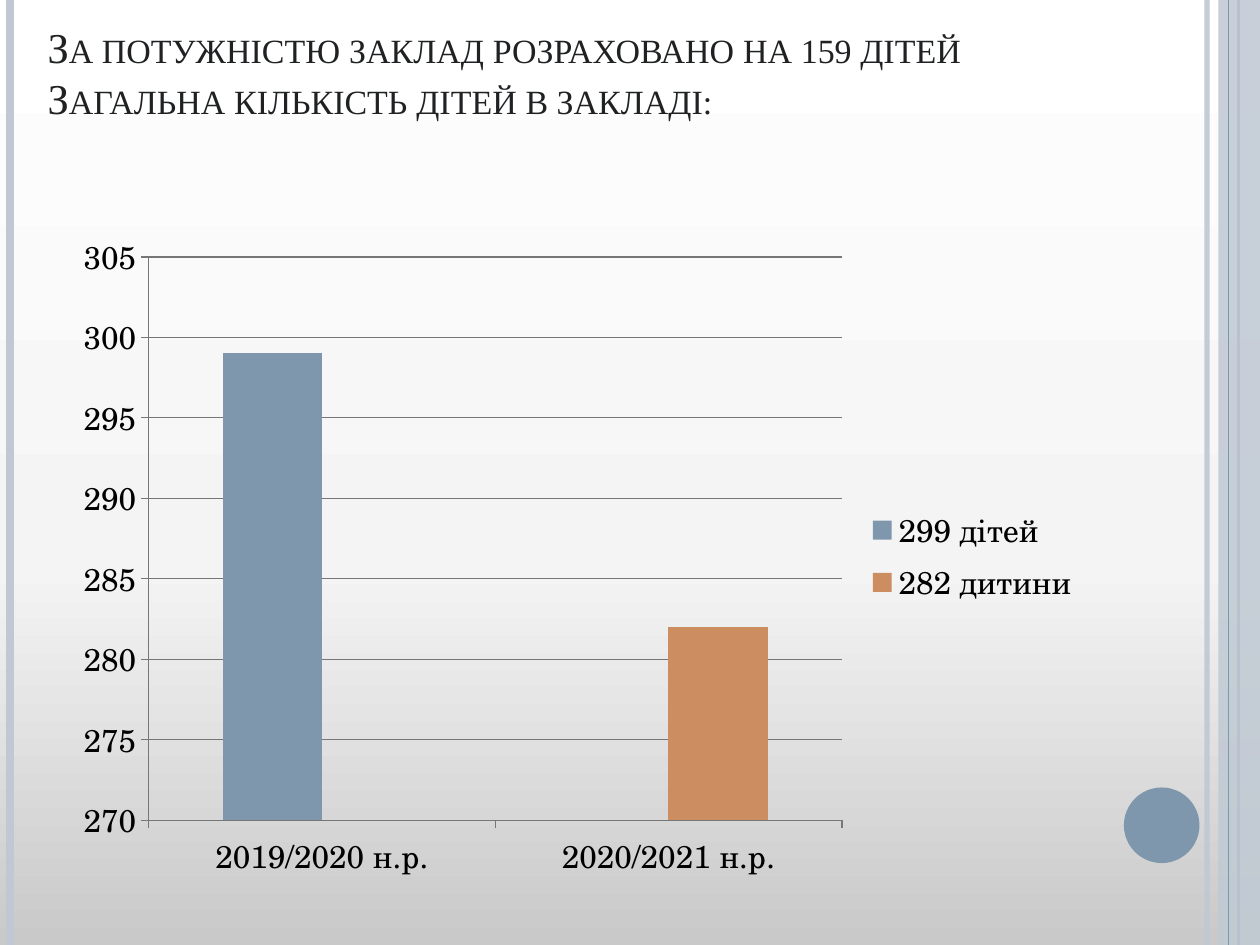
import copy

import pptx
import pptx.chart.data
import pptx.dml.color
import pptx.enum.chart
import pptx.enum.shapes
import pptx.enum.text
import pptx.oxml
import pptx.oxml.ns
import pptx.util

Inches, Pt = pptx.util.Inches, pptx.util.Pt

WIDTH, HEIGHT = 10, 7.5
BLUE, PALE, GRID = "7E97AD", "C0C9D3", "767676"
BACKGROUND = [(0, "C9C9C9"), (0.4, "F4F4F4"), (1, "FFFFFF")]
# x, colour, width in points, opacity in percent
STRIPES_BEHIND = [(9.58, PALE, 3, 93), (0.08, PALE, 4.5, 100), (9.83, BLUE, 1.5, 100)]
STRIPES_FRONT = [(9.75, BLUE, 0.75, 100)]
TITLE = ["За потужністю заклад розраховано на 159 дітей",
         "Загальна кількість дітей в закладі:"]
YEARS = ["2019/2020 н.р.", "2020/2021 н.р."]
SERIES = [("299 дітей", (299, None), BLUE), ("282 дитини", (None, 282), "CC8E60")]


def rgb(value):
    return pptx.dml.color.RGBColor.from_string(value)


def set_opacity(shape, percent):
    color = next(shape._element.spPr.iter(pptx.oxml.ns.qn("a:srgbClr")))
    alpha = pptx.oxml.parse_xml(f'<a:alpha {pptx.oxml.ns.nsdecls("a")} val="{percent * 1000}"/>')
    color.append(alpha)


def paint_background(page):
    fill = page.background.fill
    fill.gradient()
    fill.gradient_angle = 90
    stop_list = next(page._element.iter(pptx.oxml.ns.qn("a:gsLst")))
    stop_list.append(copy.deepcopy(stop_list[0]))
    for stop, (position, color) in zip(fill.gradient_stops, BACKGROUND):
        stop.position = position
        stop.color.rgb = rgb(color)


def add_stripes(page, stripes):
    for x, color, width, opacity in stripes:
        stripe = page.shapes.add_connector(
            pptx.enum.shapes.MSO_CONNECTOR.STRAIGHT,
            Inches(x), 0, Inches(x), Inches(HEIGHT))
        stripe.line.color.rgb = rgb(color)
        stripe.line.width = Pt(width)
        if opacity < 100:
            set_opacity(stripe, opacity)
        stripe._element.spPr.append(
            pptx.oxml.parse_xml(f'<a:effectLst {pptx.oxml.ns.nsdecls("a")}/>'))


def add_solid(page, kind, area, color):
    shape = page.shapes.add_shape(kind, *map(Inches, area))
    shape.shadow.inherit = False
    shape.fill.solid()
    shape.fill.fore_color.rgb = rgb(color)
    shape.line.fill.background()
    return shape


def add_title(page):
    box = page.shapes.add_textbox(Inches(0.28), Inches(0.12), Inches(8.17), Inches(0.91))
    frame = box.text_frame
    frame.word_wrap = True
    frame.vertical_anchor = pptx.enum.text.MSO_ANCHOR.TOP
    frame.text = "\n".join(TITLE)
    for para in frame.paragraphs:
        for span in para.runs:
            span.font.name = "Times New Roman"
            span.font.size = Pt(24.3)
            span.font.color.rgb = rgb("1F2123")
            span._r.get_or_add_rPr().set("cap", "small")


def add_children_chart(page):
    data = pptx.chart.data.CategoryChartData()
    data.categories = YEARS
    for name, values, _ in SERIES:
        data.add_series(name, values)
    chart = page.shapes.add_chart(
        pptx.enum.chart.XL_CHART_TYPE.COLUMN_CLUSTERED,
        Inches(0.5), Inches(1.75), Inches(8.17), Inches(5.33), data).chart
    chart.has_title = False
    chart.font.name = "TeX Gyre Schola"
    chart.font.size = Pt(18)
    chart.font.color.rgb = rgb("000000")
    chart.has_legend = True
    chart.legend.position = pptx.enum.chart.XL_LEGEND_POSITION.RIGHT
    chart.legend.include_in_layout = False

    plot = chart.plots[0]
    plot.gap_width = 150
    plot.overlap = 0
    plot.vary_by_categories = False
    for series, (_, _, color) in zip(plot.series, SERIES):
        series.format.fill.solid()
        series.format.fill.fore_color.rgb = rgb(color)

    values = chart.value_axis
    values.minimum_scale, values.maximum_scale, values.major_unit = 270, 305, 5
    values.has_major_gridlines = True
    for axis in (values, chart.category_axis):
        axis.major_tick_mark = pptx.enum.chart.XL_TICK_MARK.OUTSIDE
        axis.format.line.color.rgb = rgb(GRID)
        axis.format.line.width = Pt(0.75)
    values.major_gridlines.format.line.color.rgb = rgb(GRID)
    values.major_gridlines.format.line.width = Pt(0.75)


def main():
    deck = pptx.Presentation()
    deck.slide_width, deck.slide_height = Inches(WIDTH), Inches(HEIGHT)
    page = deck.slides.add_slide(deck.slide_layouts[6])
    kinds = pptx.enum.shapes.MSO_SHAPE
    paint_background(page)
    add_stripes(page, STRIPES_BEHIND)
    band = add_solid(page, kinds.RECTANGLE, (9.67, 0, 0.33, HEIGHT), PALE)
    set_opacity(band, 87)
    add_stripes(page, STRIPES_FRONT)
    add_solid(page, kinds.OVAL, (8.92, 6.25, 0.6, 0.6), BLUE)
    add_title(page)
    add_children_chart(page)
    deck.save("out.pptx")


if __name__ == "__main__":
    main()
